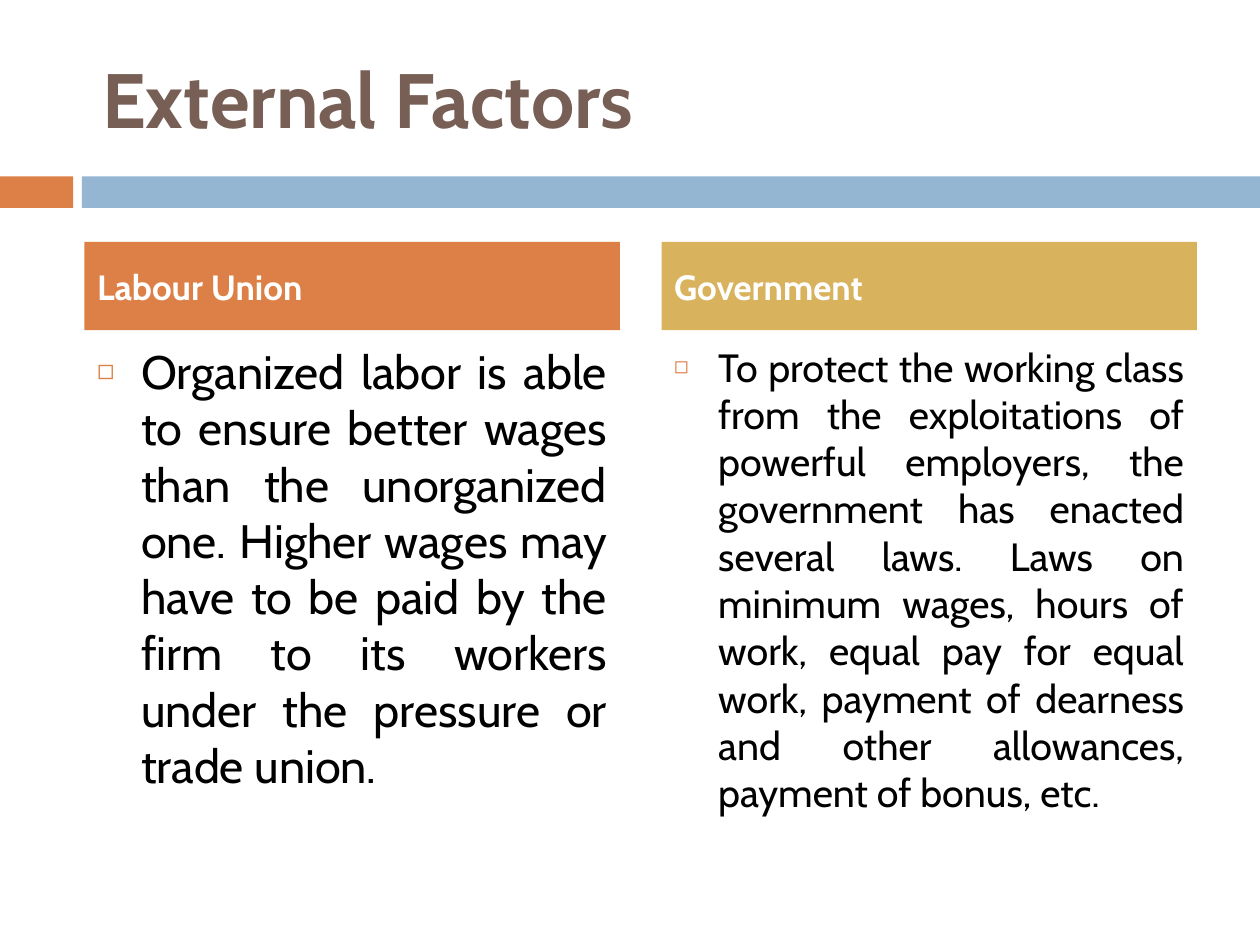
from lxml.etree import SubElement
from pptx import Presentation
from pptx.dml.color import RGBColor as RGB
from pptx.enum.shapes import MSO_SHAPE as Kind
from pptx.enum.text import MSO_ANCHOR as Anchor, MSO_AUTO_SIZE as Fit, PP_ALIGN as Align
from pptx.oxml.ns import qn
from pptx.util import Inches, Pt

FONT = "Cabin"
ORANGE = RGB(0xDD, 0x80, 0x47)
BLUE = RGB(0x94, 0xB6, 0xD2)
GOLD = RGB(0xD8, 0xB2, 0x5C)
BROWN = RGB(0x77, 0x5F, 0x55)
BLACK = RGB(0, 0, 0)
WHITE = RGB(0xFF, 0xFF, 0xFF)

WIDE, HIGH = 10, 7.5
LEFT, COL, GAP = 0.67, 4.25, 0.33
HEAD_TOP, HEAD_HIGH = 1.92, 0.7
BODY_TOP, BODY_HIGH = 2.67, 3.92
BAND_TOP, BAND_HIGH = 1.4, 0.25

# heading, heading fill, text, text size
FACTORS = [
    ("Labour Union", ORANGE,
     "Organized labor is able to ensure better wages than the unorganized one. "
     "Higher wages may have to be paid by the firm to its workers under the "
     "pressure or trade union.", 26.8),
    ("Government", GOLD,
     "To protect the working class from the exploitations of powerful employers, "
     "the government has enacted several laws. Laws on minimum wages, hours of "
     "work, equal pay for equal work, payment of dearness and other allowances, "
     "payment of bonus, etc.", 22.5),
]


def place(shape, left, top, width, height):
    shape.left, shape.top = Inches(left), Inches(top)
    shape.width, shape.height = Inches(width), Inches(height)


def paint(shape, color):
    shape.fill.solid()
    shape.fill.fore_color.rgb = color


def write(shape, text, size, color, bold=False, align=Align.JUSTIFY,
          anchor=Anchor.MIDDLE, before=7, inset=0.1):
    frame = shape.text_frame
    frame.word_wrap = True
    frame.auto_size = Fit.NONE
    frame.vertical_anchor = anchor
    frame.margin_left = Inches(inset)
    para = frame.paragraphs[0]
    para.alignment = align
    para.space_before = Pt(before)
    run = para.add_run()
    run.text = text
    font = run.font
    font.name, font.size, font.bold = FONT, Pt(size), bold
    font.color.rgb = color
    return para


def add_bullet(para, color, indent=0.35):
    props = para._p.get_or_add_pPr()
    props.set("marL", str(Inches(indent)))
    props.set("indent", str(-Inches(indent)))
    tint = SubElement(props, qn("a:buClr"))
    SubElement(tint, qn("a:srgbClr"), val=str(color))
    SubElement(props, qn("a:buSzPct"), val="60000")
    SubElement(props, qn("a:buChar"), char="◻")


def add_band(slide, left, right, color):
    band = slide.shapes.add_shape(
        Kind.RECTANGLE, Inches(left), Inches(BAND_TOP),
        Inches(right - left), Inches(BAND_HIGH))
    paint(band, color)
    band.line.fill.background()
    band.shadow.inherit = False


def fill_column(head, body, left, factor):
    title, color, text, size = factor
    place(head, left, HEAD_TOP, COL, HEAD_HIGH)
    paint(head, color)
    write(head, title, 20, WHITE, bold=True)
    place(body, left, BODY_TOP, COL, BODY_HIGH)
    para = write(body, text, size, BLACK, anchor=Anchor.TOP)
    add_bullet(para, ORANGE)


def main():
    deck = Presentation()
    deck.slide_width, deck.slide_height = Inches(WIDE), Inches(HIGH)
    slide = deck.slides.add_slide(deck.slide_layouts.get_by_name("Comparison"))
    add_band(slide, 0, 0.58, ORANGE)
    add_band(slide, 0.65, WIDE, BLUE)

    title, *slots = slide.placeholders
    place(title, 0.58, 0.3, 8.92, 0.95)
    write(title, "External Factors", 44, BROWN, bold=True,
          align=Align.LEFT, before=0, inset=0.23)
    for col, factor in enumerate(FACTORS):
        head, body = slots[2 * col:2 * col + 2]
        fill_column(head, body, LEFT + col * (COL + GAP), factor)
    deck.save("out.pptx")


if __name__ == "__main__":
    main()
